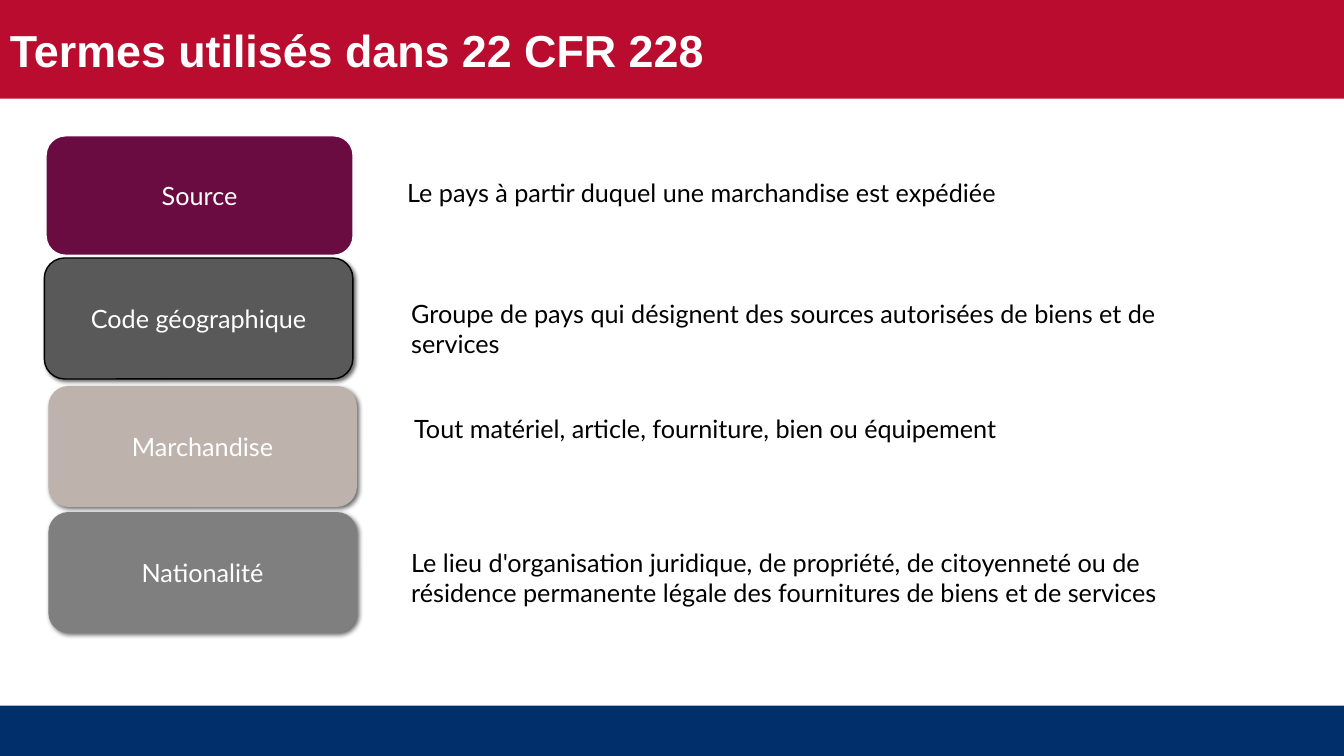
from dataclasses import dataclass

from lxml.etree import SubElement
from pptx import Presentation
from pptx.dml.color import RGBColor
from pptx.enum.shapes import MSO_SHAPE
from pptx.enum.text import MSO_ANCHOR, PP_ALIGN
from pptx.oxml.ns import qn
from pptx.util import Emu, Pt

PX = 9144  # EMU per px, 100 px to the inch
WIDTH, HEIGHT = 1333, 750


@dataclass(frozen=True)
class Theme:
    red: str = "BA0C2F"
    navy: str = "002F6C"
    plum: str = "6A0B42"
    charcoal: str = "595959"
    sand: str = "BDB2AC"
    gray: str = "7F7F7F"
    white: str = "FFFFFF"
    black: str = "000000"
    heading_font: str = "Arial"
    body_font: str = "Lato"
    heading_size: int = 32
    body_size: int = 18


def write_text(frame, text, *, font, size, color, bold=False,
               align=PP_ALIGN.LEFT, anchor=MSO_ANCHOR.MIDDLE, top_inset=5):
    frame.word_wrap = True
    frame.vertical_anchor = anchor
    frame.margin_left = frame.margin_right = Emu(10 * PX)
    frame.margin_top, frame.margin_bottom = Emu(top_inset * PX), Emu(5 * PX)
    paragraph = frame.paragraphs[0]
    paragraph.alignment = align
    run = paragraph.add_run()
    run.text = text
    run.font.name, run.font.size, run.font.bold = font, Pt(size), bold
    run.font.color.rgb = RGBColor.from_string(color)


class SlideBuilder:
    def __init__(self, slide, theme):
        self.slide, self.theme = slide, theme

    def block(self, kind, box, fill, line=None):
        block = self.slide.shapes.add_shape(kind, *(Emu(v * PX) for v in box))
        block.shadow.inherit = False
        block.fill.solid()
        block.fill.fore_color.rgb = RGBColor.from_string(fill)
        if line:
            color, width = line
            block.line.color.rgb = RGBColor.from_string(color)
            block.line.width = Pt(width)
        else:
            block.line.fill.background()
        return block

    def band(self, top, height, fill):
        return self.block(MSO_SHAPE.RECTANGLE, (0, top, WIDTH, height), fill)

    def title(self, text):
        t = self.theme
        write_text(self.band(0, 98, t.red).text_frame, text, bold=True,
                   font=t.heading_font, size=t.heading_size, color=t.white)

    def term(self, text, left, top, fill, line=None, blur=None):
        t = self.theme
        card = self.block(MSO_SHAPE.ROUNDED_RECTANGLE,
                          (left, top, 306, 120), fill, line)
        if blur:
            self.cast_shadow(card, blur)
        write_text(card.text_frame, text, font=t.body_font, size=t.body_size,
                   color=t.white, align=PP_ALIGN.CENTER)

    def cast_shadow(self, card, blur):
        effects = card.element.spPr.find(qn("a:effectLst"))
        shadow = SubElement(effects, qn("a:outerShdw"), blurRad=str(Pt(blur)),
                            dist=str(Pt(2)), dir=str(45 * 60000), rotWithShape="0")
        color = SubElement(shadow, qn("a:srgbClr"), val=self.theme.black)
        SubElement(color, qn("a:alpha"), val="60000")

    def definition(self, text, box):
        t = self.theme
        area = self.slide.shapes.add_textbox(*(Emu(v * PX) for v in box))
        # The text starts one line below the top of its box
        write_text(area.text_frame, text, font=t.body_font, size=t.body_size,
                   color=t.black, anchor=MSO_ANCHOR.TOP, top_inset=35)


def main():
    deck = Presentation()
    deck.slide_width, deck.slide_height = Emu(WIDTH * PX), Emu(HEIGHT * PX)
    theme = Theme()
    builder = SlideBuilder(deck.slides.add_slide(deck.slide_layouts[6]), theme)

    # Footer and title bands
    builder.band(700, 50, theme.navy)
    builder.title("Termes utilisés dans 22 CFR 228")

    # Terms with their definitions
    glossary = [
        (("Source", 45, 134, theme.plum, (theme.white, 2)),
         "Le pays à partir duquel une marchandise est expédiée",
         (394, 141, 775, 101)),
        (("Code géographique", 44, 256, theme.charcoal, (theme.black, 1), 3),
         "Groupe de pays qui désignent des sources autorisées de biens et de services",
         (398, 261, 771, 131)),
        (("Marchandise", 48, 383, theme.sand, None, 3.5),
         "Tout matériel, article, fourniture, bien ou équipement",
         (401, 375, 724, 101)),
        (("Nationalité", 48, 508, theme.gray, None, 3.5),
         "Le lieu d'organisation juridique, de propriété, de citoyenneté ou de "
         "résidence permanente légale des fournitures de biens et de services",
         (398, 508, 797, 131)),
    ]
    for term, meaning, box in glossary:
        builder.term(*term)
        builder.definition(meaning, box)

    deck.save("out.pptx")


if __name__ == "__main__":
    main()
